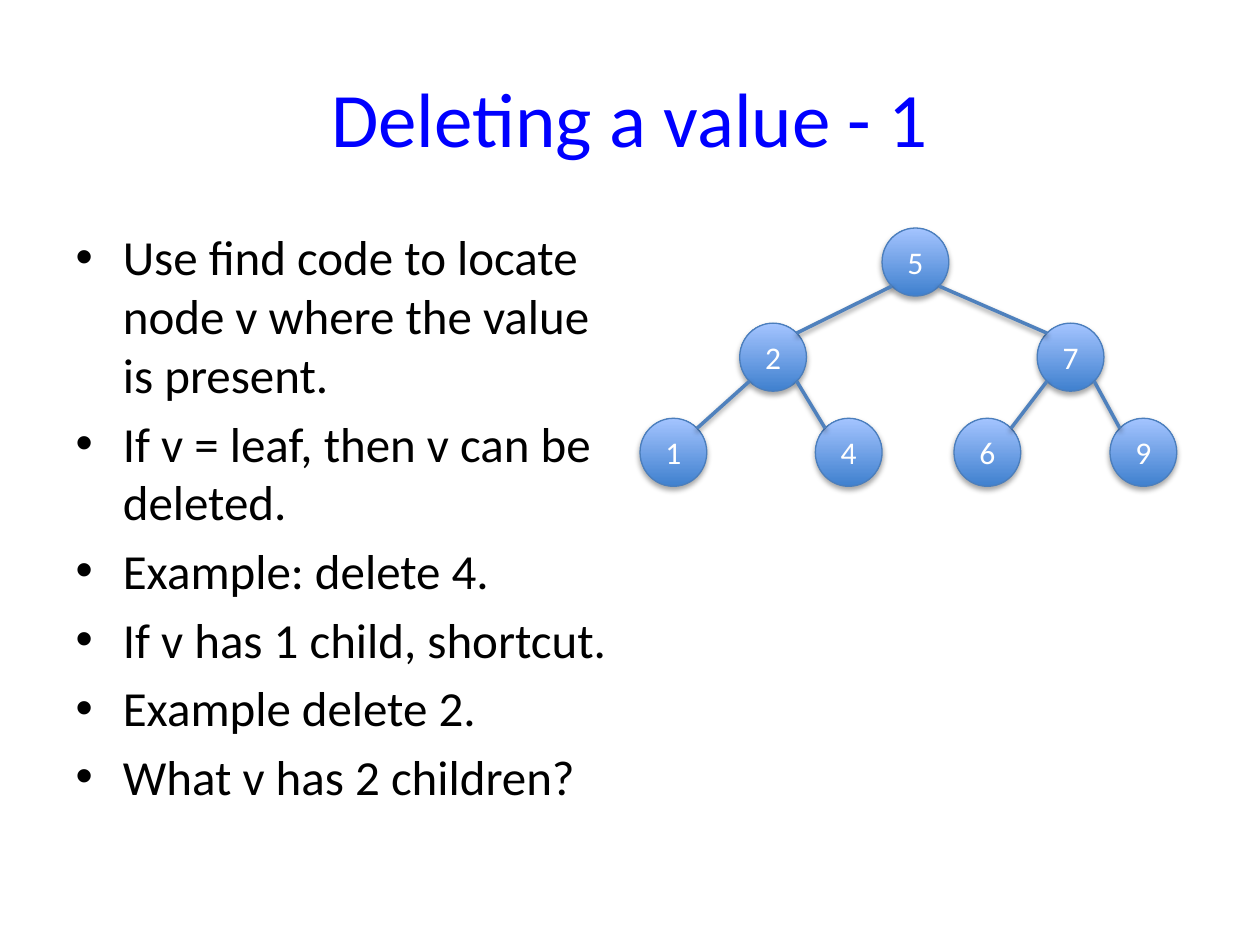
from math import cos, radians, sin

from lxml import etree
from pptx import Presentation
from pptx.dml.color import RGBColor
from pptx.enum.shapes import MSO_CONNECTOR, MSO_SHAPE
from pptx.enum.text import MSO_ANCHOR, PP_ALIGN
from pptx.oxml.ns import qn
from pptx.util import Inches, Pt

OVAL = MSO_SHAPE.OVAL
STRAIGHT = MSO_CONNECTOR.STRAIGHT
CENTER = PP_ALIGN.CENTER
MIDDLE = MSO_ANCHOR.MIDDLE

BLUE = RGBColor(0x00, 0x00, 0xFF)
BLACK = RGBColor(0x00, 0x00, 0x00)
WHITE = RGBColor(0xFF, 0xFF, 0xFF)
NODE_BOTTOM = RGBColor(0x3F, 0x80, 0xCE)
NODE_TOP = RGBColor(0xA4, 0xC4, 0xFF)
NODE_LINE = RGBColor(0x4B, 0x7E, 0xBC)
EDGE_LINE = RGBColor(0x4F, 0x81, 0xBD)

FONT = "Calibri"
TWO_CONTENT = 3
NODE_W, NODE_H = 0.53, 0.54

TITLE = "Deleting a value - 1"
POINTS = [
    "Use find code to locate node v where the value is present.",
    "If v = leaf, then v can be deleted.",
    "Example: delete 4.",
    "If v has 1 child, shortcut.",
    "Example delete 2.",
    "What v has 2 children?",
]
TREE_BOX = (5.08, 1.81, 4.26, 2.05)
# value: (percent across the tree box, level)
NODES = {
    1: (0, 2), 2: (21.2, 1), 4: (37.3, 2), 5: (51.5, 0),
    6: (66.8, 2), 7: (84.5, 1), 9: (100, 2),
}
CHILDREN = {5: (2, 7), 2: (1, 4), 7: (6, 9)}


def write_text(tf, lines, size, color, align=None):
    for i, line in enumerate(lines):
        p = tf.paragraphs[0] if i == 0 else tf.add_paragraph()
        p.alignment = align
        r = p.add_run()
        r.text = line
        r.font.name = FONT
        r.font.size = Pt(size)
        r.font.color.rgb = color


def set_shadow(sp, blur, dist, alpha):
    """Give a shape or connector a black shadow falling straight down."""
    effects = etree.SubElement(sp._element.spPr, qn("a:effectLst"))
    shadow = etree.SubElement(
        effects, qn("a:outerShdw"), blurRad=str(Pt(blur)), dist=str(Pt(dist)),
        dir="5400000", rotWithShape="0")
    color = etree.SubElement(shadow, qn("a:srgbClr"), val=str(BLACK))
    etree.SubElement(color, qn("a:alpha"), val=str(alpha * 1000))


def add_node(s, value, cx, cy):
    sp = s.shapes.add_shape(OVAL, Inches(cx - NODE_W / 2), Inches(cy - NODE_H / 2),
                            Inches(NODE_W), Inches(NODE_H))
    sp.fill.gradient()
    sp.fill.gradient_angle = 90
    for stop, color in zip(sp.fill.gradient_stops, (NODE_BOTTOM, NODE_TOP)):
        stop.color.rgb = color
    sp.line.color.rgb = NODE_LINE
    sp.line.width = Pt(0.75)
    set_shadow(sp, blur=3.1, dist=1.8, alpha=35)
    tf = sp.text_frame
    tf.margin_left = tf.margin_right = tf.margin_top = tf.margin_bottom = 0
    tf.vertical_anchor = MIDDLE
    write_text(tf, [str(value)], size=18, color=WHITE, align=CENTER)


def rim_point(center, angle):
    """Point on a node's outline, with the angle clockwise from the right."""
    cx, cy = center
    return (Inches(cx + NODE_W / 2 * cos(radians(angle))),
            Inches(cy + NODE_H / 2 * sin(radians(angle))))


def add_edge(s, parent, child):
    leaving, arriving = (135, -45) if child[0] < parent[0] else (45, -135)
    line = s.shapes.add_connector(STRAIGHT, *rim_point(parent, leaving),
                                  *rim_point(child, arriving))
    line.line.color.rgb = EDGE_LINE
    line.line.width = Pt(2)
    set_shadow(line, blur=3.1, dist=1.6, alpha=38)


def add_tree(s, left, top, width, height):
    step = (height - NODE_H) / max(level for _, level in NODES.values())
    centers = {
        value: (left + NODE_W / 2 + (width - NODE_W) * across / 100,
                top + NODE_H / 2 + step * level)
        for value, (across, level) in NODES.items()
    }
    for value, center in centers.items():
        add_node(s, value, *center)
    for parent, children in CHILDREN.items():
        for child in children:
            add_edge(s, centers[parent], centers[child])


def place(sp, left, top, width, height):
    sp.left, sp.top = Inches(left), Inches(top)
    sp.width, sp.height = Inches(width), Inches(height)


def add_title(s, *box):
    place(s.shapes.title, *box)
    write_text(s.shapes.title.text_frame, [TITLE], size=44, color=BLUE, align=CENTER)


def add_points(s, *box):
    body = s.placeholders[1]
    place(body, *box)
    write_text(body.text_frame, POINTS, size=28, color=BLACK)


def main():
    prs = Presentation()
    prs.slide_width, prs.slide_height = Inches(10), Inches(7.5)
    s = prs.slides.add_slide(prs.slide_layouts[TWO_CONTENT])
    unused = s.placeholders[2]._element
    unused.getparent().remove(unused)
    add_title(s, 0.5, 0.3, 9, 1.25)
    add_points(s, 0.5, 1.75, 4.42, 4.95)
    add_tree(s, *TREE_BOX)
    prs.save("out.pptx")


if __name__ == "__main__":
    main()
